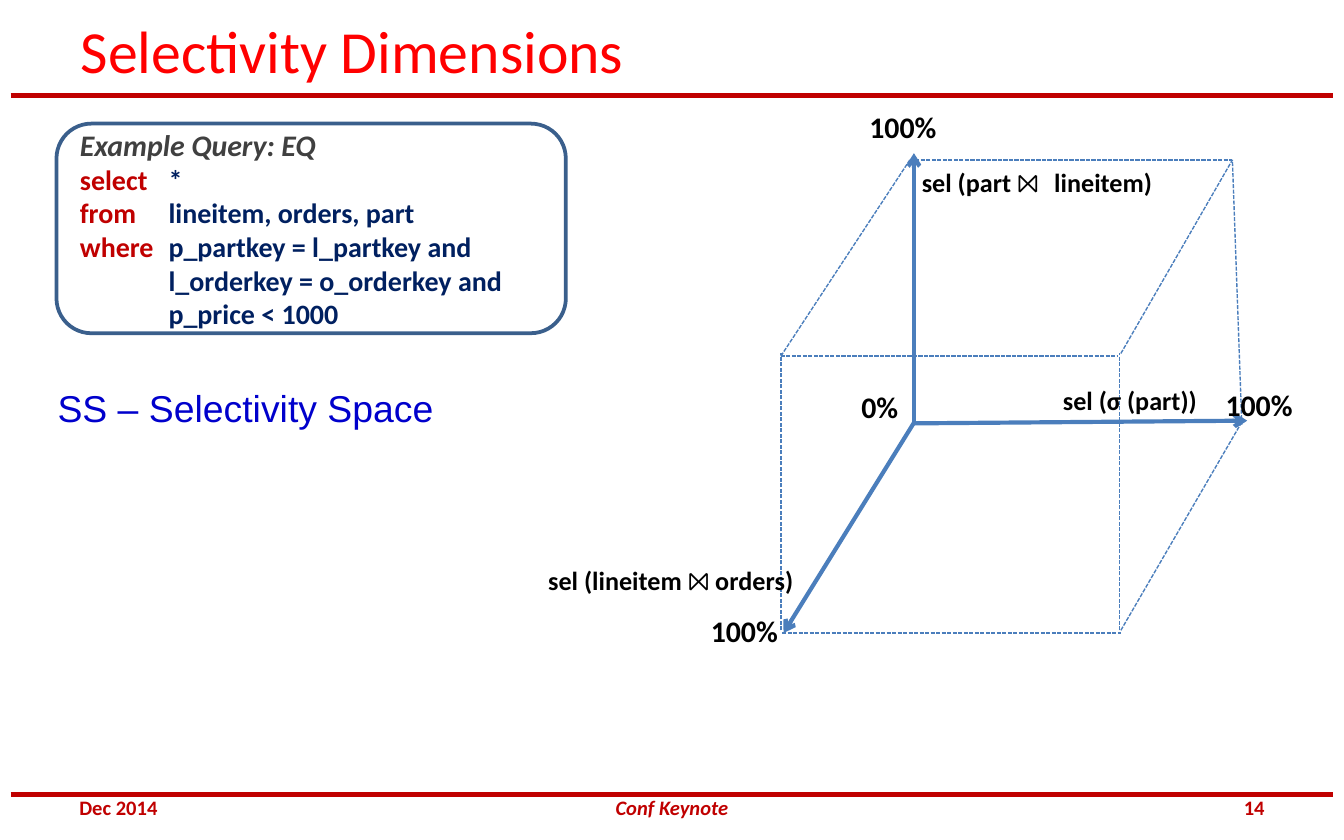
from pptx import Presentation
from pptx.dml.color import RGBColor
from pptx.enum.dml import MSO_LINE_DASH_STYLE as DASH
from pptx.enum.shapes import MSO_CONNECTOR as CONNECTOR, MSO_SHAPE as SHAPE
from pptx.enum.text import MSO_ANCHOR as ANCHOR, MSO_AUTO_SIZE as AUTO_SIZE, PP_ALIGN as ALIGN
from pptx.oxml.ns import qn
from pptx.util import Emu, Pt
from lxml.etree import SubElement

PX = 9144  # one px is a hundredth of an inch
COLORS = {
    "white": "FFFFFF", "black": "000000", "title": "FF0000", "rule": "C00000",
    "border": "3A5F8C", "axis": "4B7EBC", "heading": "404040",
    "keyword": "C00000", "code": "002060", "space": "0000CC",
}


def px(value):
    return Emu(value * PX)


def rgb(name):
    return RGBColor.from_string(COLORS[name])


class SlideBuilder:
    font = "Calibri"
    symbol_font = "Noto Sans Mono"

    def __init__(self, slide):
        self.slide = slide

    def run(self, paragraph, text, size, color="black", bold=True, italic=False, font=None):
        run = paragraph.add_run()
        run.text = text
        run.font.name = font or self.font
        run.font.size = Pt(size)
        run.font.bold = bold
        run.font.italic = italic
        run.font.color.rgb = rgb(color)

    def title(self, text, left, top, width, height):
        shape = self.slide.shapes.title
        shape.left, shape.top, shape.width, shape.height = map(px, (left, top, width, height))
        shape.text_frame.vertical_anchor = ANCHOR.MIDDLE
        shape.text_frame.auto_size = AUTO_SIZE.NONE
        paragraph = shape.text_frame.paragraphs[0]
        paragraph.alignment = ALIGN.LEFT
        self.run(paragraph, text, 32, "title", bold=False)

    def label(self, parts, left, top, width, height, size, **style):
        """A one-line text; parts are (text, extra style) pairs."""
        box = self.slide.shapes.add_textbox(*map(px, (left, top, width, height)))
        frame = box.text_frame
        frame.word_wrap = False
        frame.auto_size = AUTO_SIZE.SHAPE_TO_FIT_TEXT
        for text, extra in parts:
            self.run(frame.paragraphs[0], text, size, **{**style, **extra})

    def footer(self, text, left, width, alignment, italic=False):
        box = self.slide.shapes.add_textbox(*map(px, (left, 588, width, 25)))
        frame = box.text_frame
        frame.word_wrap = True
        frame.vertical_anchor = ANCHOR.MIDDLE
        frame.margin_left = frame.margin_right = px(9)
        frame.margin_top = frame.margin_bottom = px(4)
        frame.paragraphs[0].alignment = alignment
        self.run(frame.paragraphs[0], text, 11, "rule", italic=italic)

    def line(self, start, end, color, width, dash=None, arrow=False):
        line = self.slide.shapes.add_connector(CONNECTOR.STRAIGHT, *map(px, start + end))
        line.line.color.rgb = rgb(color)
        line.line.width = Pt(width)
        if dash:
            line.line.dash_style = dash
        if arrow:
            SubElement(line.line._get_or_add_ln(), qn("a:tailEnd"), type="arrow")
        SubElement(line._element.spPr, qn("a:effectLst"))

    def query_box(self, heading, clauses, left, top, width, height, indent):
        shape = self.slide.shapes.add_shape(
            SHAPE.ROUNDED_RECTANGLE, *map(px, (left, top, width, height)))
        shape.shadow.inherit = False
        shape.fill.solid()
        shape.fill.fore_color.rgb = rgb("white")
        shape.line.color.rgb = rgb("border")
        shape.line.width = Pt(2)
        frame = shape.text_frame
        frame.word_wrap = True
        frame.vertical_anchor = ANCHOR.MIDDLE
        paragraph = frame.paragraphs[0]
        paragraph.alignment = ALIGN.LEFT
        self.run(paragraph, heading, 16, "heading", italic=True)
        for keyword, code in clauses:
            paragraph = frame.add_paragraph()
            paragraph.alignment = ALIGN.LEFT
            # A keyword hangs to the left of the code column
            properties = paragraph._p.get_or_add_pPr()
            properties.set("marL", str(px(indent)))
            properties.set("indent", str(px(-indent) if keyword else 0))
            if keyword:
                self.run(paragraph, keyword + "\t", 15, "keyword")
            self.run(paragraph, code, 15, "code")


def main():
    presentation = Presentation()
    presentation.slide_width, presentation.slide_height = px(1000), px(625)
    builder = SlideBuilder(presentation.slides.add_slide(presentation.slide_layouts[5]))

    # Rules and title
    for y in (71, 591):
        builder.line((8, y), (992, y), "rule", 2.75)
    builder.title("Selectivity Dimensions", 50, 12, 900, 50)

    # Example query
    builder.query_box("Example Query: EQ", [
        ("select", "*"),
        ("from", "lineitem, orders, part"),
        ("where", "p_partkey = l_partkey and"),
        ("", "l_orderkey = o_orderkey and"),
        ("", "p_price < 1000"),
    ], 42, 92, 379, 156, indent=66)

    # Axes of the selectivity space
    for start, end in [((680, 315), (928, 313)),
                       ((681, 313), (583, 471)),
                       ((680, 314), (680, 114))]:
        builder.line(start, end, "axis", 2.25, arrow=True)

    # Dashed edges of the cube
    back_left, back_right = (677, 119), (917, 119)
    for start, end in [(back_left, back_right),
                       ((582, 471), (834, 471)),
                       ((834, 469), (924, 314)),
                       ((581, 265), back_left),
                       ((581, 469), (581, 263)),
                       ((924, 316), back_right),
                       ((833, 469), (833, 263)),
                       ((834, 263), back_right),
                       ((581, 265), (832, 265))]:
        builder.line(start, end, "axis", 0.75, dash=DASH.SQUARE_DOT)

    # Axis names
    symbol = {"font": builder.symbol_font, "bold": False}
    builder.label([("sel (σ (part))", {})], 781, 281, 121, 34, 14)
    builder.label([("sel (part ", {}), ("⨝ ", symbol), ("lineitem)", {})], 676, 119, 192, 34, 14)
    builder.label([("sel (lineitem ", {}), ("⨝", symbol), (" orders)", {})], 398, 415, 208, 34, 14)

    # Axis ends
    for text, left, top, width in [("100%", 519, 451, 71), ("0%", 631, 284, 48),
                                   ("100%", 902, 283, 71), ("100%", 637, 76, 71)]:
        builder.label([(text, {})], left, top, width, 37, 16)

    # Caption
    builder.label([("SS – Selectivity Space", {})], 33, 282, 310, 44, 20,
                  color="space", bold=False, font="Arial")

    # Footer
    builder.footer("Dec 2014", 50, 233, ALIGN.LEFT)
    builder.footer("Conf Keynote", 321, 358, ALIGN.CENTER, italic=True)
    builder.footer("14", 717, 233, ALIGN.RIGHT)

    presentation.save("out.pptx")


if __name__ == "__main__":
    main()
